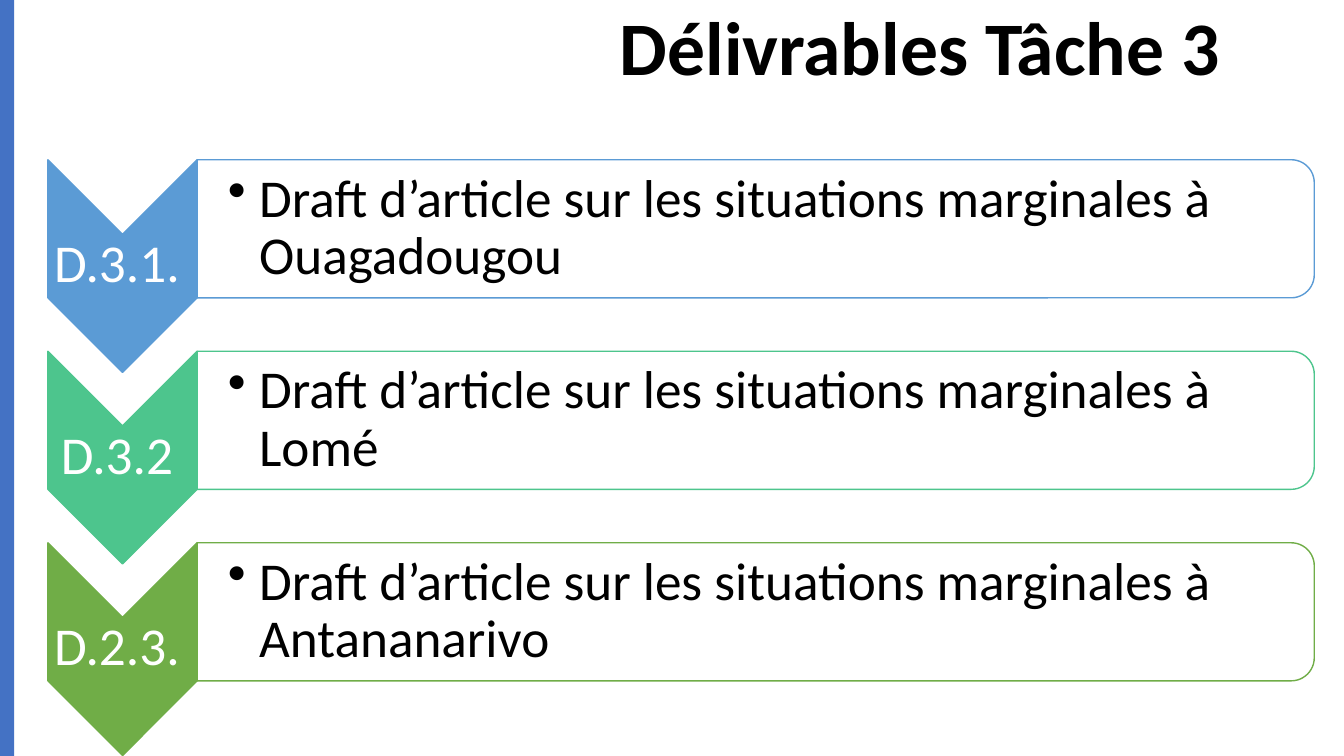
from dataclasses import dataclass

from lxml.etree import SubElement
from pptx import Presentation
from pptx.dml.color import RGBColor as Color
from pptx.enum.shapes import MSO_SHAPE as Shape
from pptx.enum.text import MSO_ANCHOR as Anchor, PP_ALIGN as Align
from pptx.oxml.ns import qn
from pptx.shapes.autoshape import Shape as Auto
from pptx.slide import Slide
from pptx.util import Inches, Pt


@dataclass(frozen=True)
class Theme:
    font: str = "Calibri"
    head: int = 54
    body: int = 38
    ink: str = "000000"
    paper: str = "FFFFFF"
    bar: str = "4472C4"


@dataclass(frozen=True)
class Box:
    left: float
    top: float
    width: float
    height: float


@dataclass(frozen=True)
class Task:
    code: str
    city: str
    tint: str


THEME = Theme()
TASKS = [
    Task("D.3.1. ", "Ouagadougou", "5B9BD5"),
    Task("D.3.2 ", "Lomé", "4DC58D"),
    Task("D.2.3. ", "Antananarivo", "70AD47"),
]
PITCH = 1.9


def add_form(slide: Slide, kind: Shape, box: Box, fill: str,
             line: str = "", turn: int = 0) -> Auto:
    form = slide.shapes.add_shape(
        kind, Inches(box.left), Inches(box.top),
        Inches(box.width), Inches(box.height))
    form.shadow.inherit = False
    form.rotation = turn
    form.fill.solid()
    form.fill.fore_color.rgb = Color.from_string(fill)
    if line:
        form.line.color.rgb = Color.from_string(line)
        form.line.width = Pt(1)
    else:
        form.line.fill.background()
    return form


def add_text(slide: Slide, box: Box, text: str, size: int, color: str,
             align: Align = Align.LEFT, bold: bool = False,
             inset: float = 0.03, left: float = 0.03,
             bullet: bool = False) -> None:
    frame = slide.shapes.add_textbox(
        Inches(box.left), Inches(box.top),
        Inches(box.width), Inches(box.height)).text_frame
    frame.word_wrap = True
    frame.vertical_anchor = Anchor.MIDDLE
    frame.margin_left = Inches(left)
    frame.margin_right = frame.margin_top = frame.margin_bottom = Inches(inset)
    para = frame.paragraphs[0]
    para.alignment = align
    para.line_spacing = 0.9
    if bullet:
        props = para._p.get_or_add_pPr()
        props.set("marL", str(Inches(0.31)))
        props.set("indent", str(Inches(-0.31)))
        SubElement(props, qn("a:buChar"), char="•")
    run = para.add_run()
    run.text = text
    run.font.name = THEME.font
    run.font.size = Pt(size)
    run.font.bold = bold
    run.font.color.rgb = Color.from_string(color)


def add_task(slide: Slide, task: Task, drop: float) -> None:
    add_form(slide, Shape.CHEVRON, Box(0.16, 1.9 + drop, 2.11, 1.48),
             task.tint, task.tint, 90)
    add_text(slide, Box(0.48, 2.32 + drop, 1.48, 0.63), task.code,
             THEME.body, THEME.paper, Align.CENTER)
    panel = add_form(slide, Shape.ROUND_2_SAME_RECTANGLE,
                     Box(6.81, -3.27 + drop, 1.37, 11.08),
                     THEME.paper, task.tint, 90)
    fill = panel._element.spPr.find(qn("a:solidFill"))
    SubElement(fill[0], qn("a:alpha"), val="90000")
    add_text(slide, Box(1.96, 1.65 + drop, 11.02, 1.24),
             f"Draft d’article sur les situations marginales à {task.city}",
             THEME.body, THEME.ink, left=0.3, bullet=True)


def main() -> None:
    deck = Presentation()
    deck.slide_width = Inches(13.33)
    deck.slide_height = Inches(7.5)
    slide = deck.slides.add_slide(deck.slide_layouts[6])
    add_text(slide, Box(6.05, -0.22, 10.32, 1.45), "Délivrables Tâche 3",
             THEME.head, THEME.ink, bold=True, inset=0.05, left=0.1)
    add_form(slide, Shape.RECTANGLE, Box(0, 0, 0.14, 7.5), THEME.bar)
    for row, task in enumerate(TASKS):
        add_task(slide, task, row * PITCH)
    deck.save("out.pptx")


if __name__ == "__main__":
    main()
